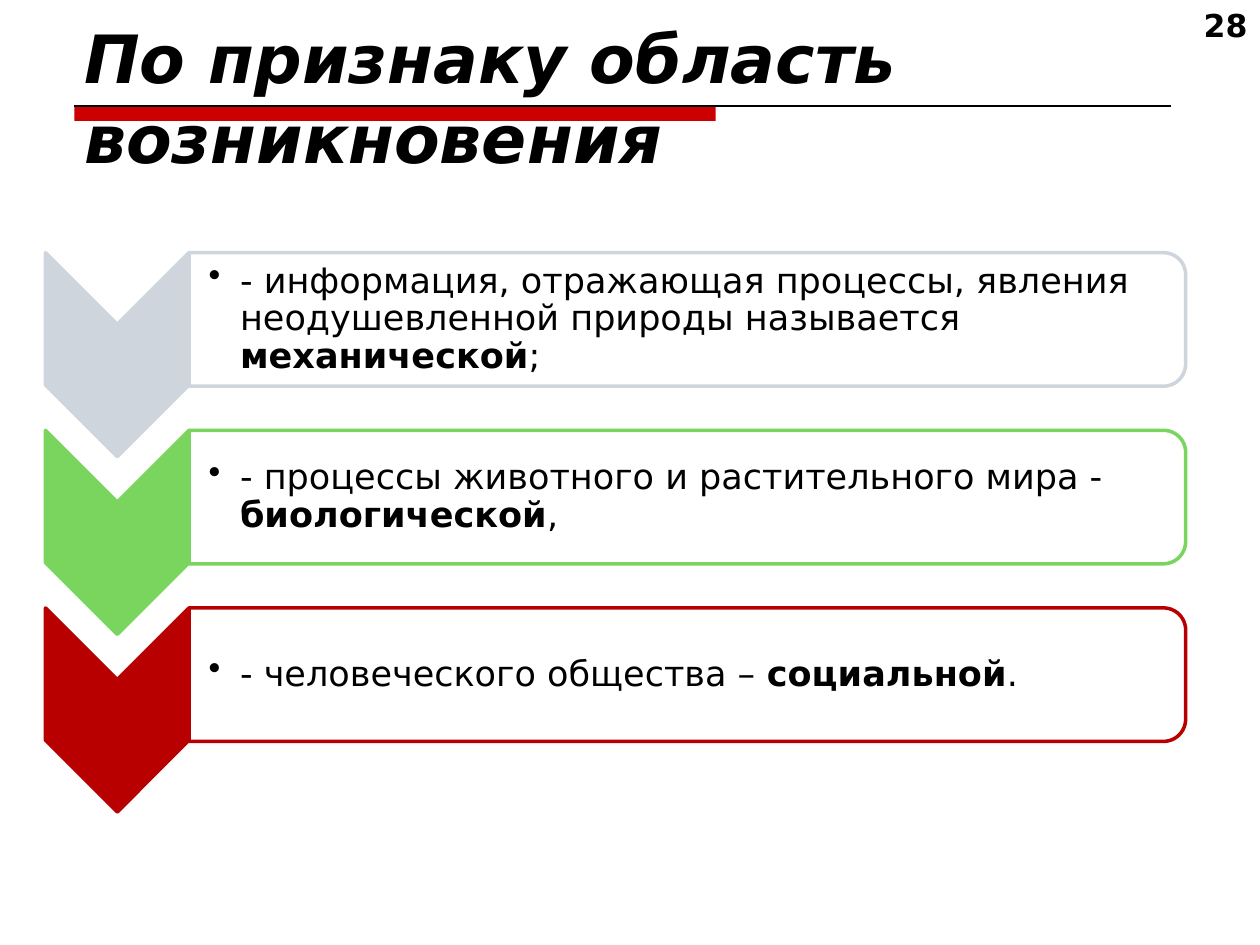
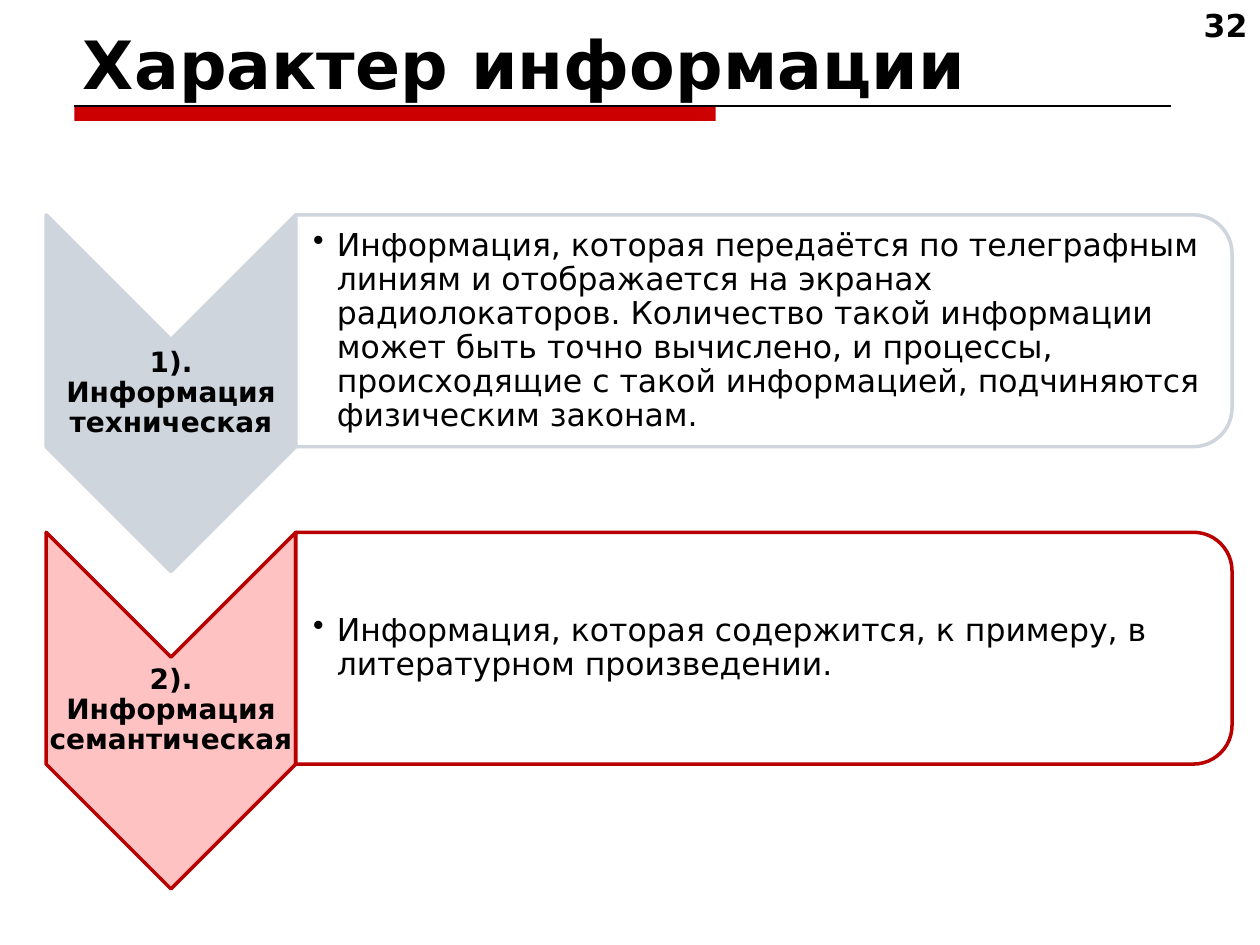
from pptx import Presentation
from pptx.dml.color import RGBColor
from pptx.enum.shapes import MSO_CONNECTOR as CONNECTOR, MSO_SHAPE as SHAPE
from pptx.enum.text import MSO_ANCHOR as ANCHOR, PP_ALIGN as ALIGN
from pptx.oxml.ns import qn
from pptx.util import Pt
from lxml.etree import SubElement

FONT = "DejaVu Sans"
BLACK, WHITE, BAND_RED = "000000", "FFFFFF", "CC0000"
GRAY, GREEN, RED, PINK = "CED5DD", "79D55D", "B90000", "FFC2C2"


def color(value):
    return RGBColor.from_string(value)


class Deck:
    """Holds the shared style and the current slide."""

    def __init__(self):
        self.presentation = Presentation()
        self.presentation.slide_width = Pt(720)
        self.presentation.slide_height = Pt(540)
        self.slide = None

    def new_slide(self, title, number, title_frame, italic=False):
        self.slide = self.presentation.slides.add_slide(self.presentation.slide_layouts[6])
        # Band and thin rule under the title
        self.shape(SHAPE.RECTANGLE, 42.5, 60.5, 366.5, 8.6, BAND_RED)
        self.rule(42.5, 669, 60.5)
        # Title and slide number
        self.text([(title, True)], *title_frame, size=38, anchor=ANCHOR.BOTTOM, italic=italic)
        self.text([(number, True)], 563.8, 0, 156.2, 37.4, size=18, align=ALIGN.RIGHT)

    def rule(self, left, right, y):
        line = self.slide.shapes.add_connector(CONNECTOR.STRAIGHT, Pt(left), Pt(y), Pt(right), Pt(y))
        line.line.color.rgb = color(BLACK)
        line.line.width = Pt(0.75)
        SubElement(line._element.spPr, qn("a:effectLst"))

    def shape(self, kind, left, top, width, height, fill, outline=None, turned=False):
        """Place a shape by its visible frame; a turned one is rotated by 90 degrees."""
        if turned:
            left, top = left + (width - height) / 2, top + (height - width) / 2
            width, height = height, width
        shape = self.slide.shapes.add_shape(kind, Pt(left), Pt(top), Pt(width), Pt(height))
        shape.rotation = 90 if turned else 0
        shape.shadow.inherit = False
        shape.fill.solid()
        shape.fill.fore_color.rgb = color(fill)
        if outline:
            shape.line.color.rgb = color(outline)
            shape.line.width = Pt(2)
        else:
            shape.line.fill.background()

    def text(self, parts, left, top, width, height, size, align=ALIGN.LEFT,
             anchor=ANCHOR.TOP, italic=False, margins=(7.2, 3.6, 7.2, 3.6),
             spacing=None, bullet_indent=None):
        """Add one paragraph from (words, bold) parts."""
        box = self.slide.shapes.add_textbox(Pt(left), Pt(top), Pt(width), Pt(height))
        frame = box.text_frame
        frame.word_wrap = True
        frame.vertical_anchor = anchor
        (frame.margin_left, frame.margin_top,
         frame.margin_right, frame.margin_bottom) = map(Pt, margins)
        paragraph = frame.paragraphs[0]
        paragraph.alignment = align
        paragraph.line_spacing = spacing
        if bullet_indent:
            properties = paragraph._p.get_or_add_pPr()
            properties.set("marL", str(Pt(bullet_indent)))
            properties.set("indent", str(-Pt(bullet_indent)))
            SubElement(properties, qn("a:buChar")).set("char", "•")
        for words, bold in parts:
            run = paragraph.add_run()
            run.text = words
            font = run.font
            font.name, font.size = FONT, Pt(size)
            font.bold, font.italic = bold, italic
            font.color.rgb = color(BLACK)

    def chevron_list(self, rows, left, top, chevron, panel, step, size, indent, margin):
        """Stack rows of (fill, outline, label, parts): a chevron and its panel."""
        chevron_width, chevron_height = chevron
        panel_width, panel_height = panel
        panel_left = left + chevron_width
        inset = panel_height * 0.05  # clears the rounded corners
        for index, (fill, outline, label, parts) in enumerate(rows):
            y = top + index * step
            self.shape(SHAPE.CHEVRON, left, y, chevron_width, chevron_height,
                       fill, outline, turned=True)
            if label:
                self.text([(label, True)], left, y + chevron_width / 2, chevron_width,
                          chevron_height - chevron_width, size=16, align=ALIGN.CENTER,
                          anchor=ANCHOR.MIDDLE, margins=(0.8,) * 4, spacing=0.9)
            self.shape(SHAPE.ROUND_2_SAME_RECTANGLE, panel_left, y, panel_width,
                       panel_height, WHITE, outline, turned=True)
            self.text(parts, panel_left, y + inset, panel_width - inset,
                      panel_height - 2 * inset, size=size, anchor=ANCHOR.MIDDLE,
                      margins=(margin, 0.8, 0.8, 0.8), spacing=0.9, bullet_indent=indent)


def main():
    deck = Deck()

    # Field of origin
    deck.new_slide("По признаку область возникновения", "28", (41, 44, 630, 60.5), italic=True)
    origins = [
        (GRAY, "- информация, отражающая процессы, явления неодушевленной природы называется ",
         "механической", ";"),
        (GREEN, "- процессы животного и растительного мира - ", "биологической", ","),
        (RED, "- человеческого общества – ", "социальной", "."),
    ]
    rows = [(hue, hue, None, [(start, False), (term, True), (end, False)])
            for hue, start, term, end in origins]
    deck.chevron_list(rows, left=26, top=144.4, chevron=(82, 116.6), panel=(569.5, 76.3),
                      step=101.5, size=20, indent=18, margin=11.2)

    # Character of information
    deck.new_slide("Характер информации", "32", (40.3, 15, 630, 47.5))
    rows = [
        (GRAY, GRAY, "1). Информация техническая",
         [("Информация, которая передаётся по телеграфным линиям и отображается на экранах "
           "радиолокаторов. Количество такой информации может быть точно вычислено, и процессы, "
           "происходящие с такой информацией, подчиняются физическим законам.", False)]),
        (PINK, RED, "2). Информация семантическая",
         [("Информация, которая содержится, к примеру, в литературном произведении.", False)]),
    ]
    deck.chevron_list(rows, left=26.4, top=122.8, chevron=(142.6, 203.8), panel=(535, 132.5),
                      step=181.4, size=18, indent=13.5, margin=10)

    deck.presentation.save("out.pptx")


if __name__ == "__main__":
    main()
